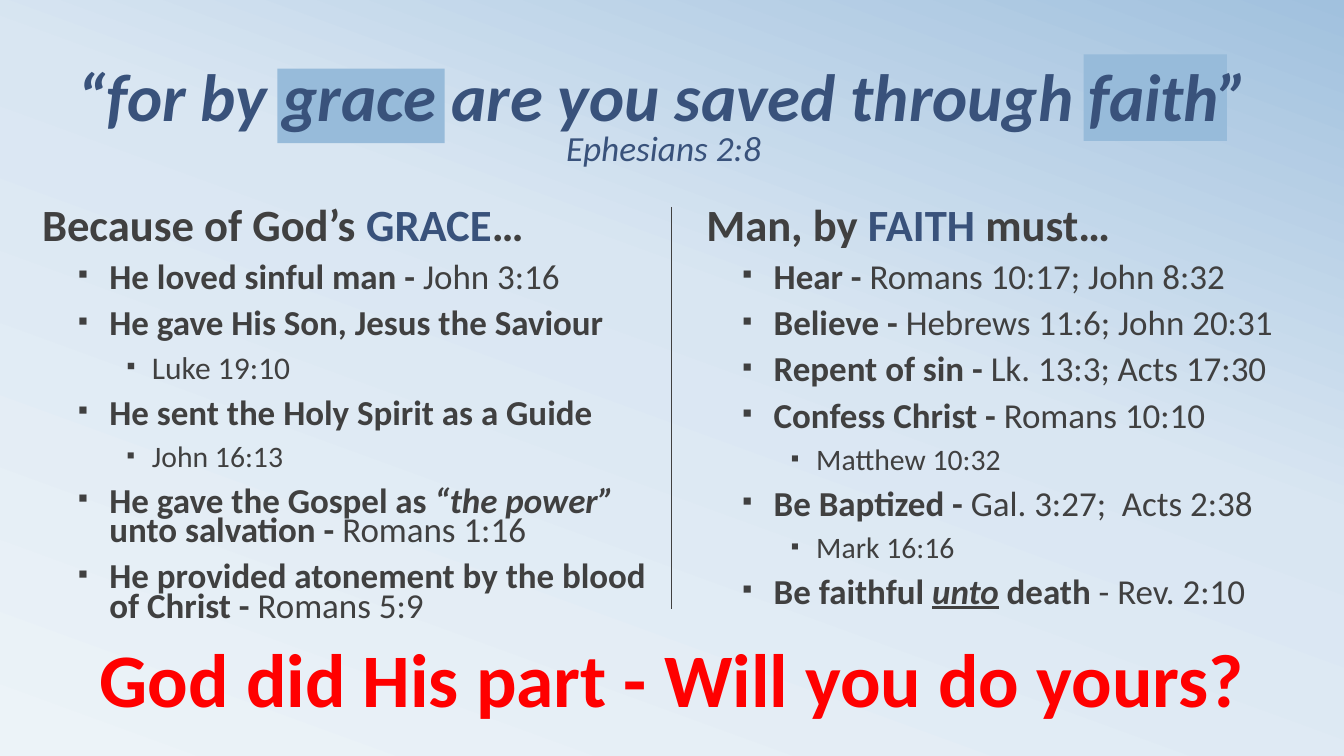
from copy import deepcopy

from lxml.etree import SubElement
from pptx import Presentation
from pptx.dml.color import RGBColor
from pptx.enum.shapes import MSO_CONNECTOR as Connector, MSO_SHAPE as Shape
from pptx.enum.text import MSO_ANCHOR as Anchor, MSO_AUTO_SIZE as AutoSize, PP_ALIGN as Align
from pptx.oxml.ns import qn
from pptx.util import Cm, Pt

NAVY, GRAY, RED, SKY = "39527B", "404040", "FF0000", "97BBDA"
BACKGROUND = [(0, "ECF3F8"), (0.58, "D9E6F2"), (1, "A1C1DE")]
INDENTS = {1: (1.7, -0.79), 2: (2.77, -0.64)}  # left margin and first line, cm

# Each point: level, text size, spans of (text, style letters)
GRACE_HEADING = [("Because of God’s ", GRAY), ("GRACE", NAVY), ("…", GRAY)]
GRACE_POINTS = [
    (1, 25, [("He loved sinful man - ", "b"), ("John 3:16", "")]),
    (1, 25, [("He gave His Son, Jesus the Saviour", "b")]),
    (2, 22.5, [("Luke 19:10", "")]),
    (1, 25, [("He sent the Holy Spirit as a Guide", "b")]),
    (2, 21.2, [("John 16:13", "")]),
    (1, 25, [("He gave the Gospel as ", "b"), ("“the power” ", "bi"),
             ("unto salvation - ", "b"), ("Romans 1:16", "")]),
    (1, 25, [("He provided atonement by the blood of Christ - ", "b"), ("Romans 5:9", "")]),
]
FAITH_HEADING = [("Man, by ", GRAY), ("FAITH", NAVY), (" must…", GRAY)]
FAITH_POINTS = [
    (1, 25, [("Hear - ", "b"), ("Romans 10:17; John 8:32", "")]),
    (1, 25, [("Believe - ", "b"), ("Hebrews 11:6; John 20:31", "")]),
    (1, 25, [("Repent of sin - ", "b"), ("Lk. 13:3; Acts 17:30", "")]),
    (1, 25, [("Confess Christ - ", "b"), ("Romans 10:10", "")]),
    (2, 21.2, [("Matthew 10:32", "")]),
    (1, 25, [("Be Baptized - ", "b"), ("Gal. 3:27;  Acts 2:38", "")]),
    (2, 21.2, [("Mark 16:16", "")]),
    (1, 25, [("Be faithful ", "b"), ("unto", "biu"), (" death", "b"), (" - Rev. 2:10", "")]),
]


def color(hex_string):
    return RGBColor.from_string(hex_string)


def write(para, text, size, ink=GRAY, style=""):
    """Add one span; style letters are b(old), i(talic), u(nderline)."""
    span = para.add_run()
    span.text = text
    font = span.font
    font.name, font.size = "Calibri", Pt(size)
    font.bold, font.italic, font.underline = ("b" in style, "i" in style, "u" in style)
    font.color.rgb = color(ink)


def add_text_frame(page, left, top, width, height):
    box = page.shapes.add_textbox(Cm(left), Cm(top), Cm(width), Cm(height))
    box.text_frame.word_wrap = True
    return box.text_frame


def add_bullet(para, level):
    margin, first_line = INDENTS[level]
    props = para._p.get_or_add_pPr()
    props.set("marL", str(Cm(margin)))
    props.set("indent", str(Cm(first_line)))
    SubElement(SubElement(props, qn("a:buClr")), qn("a:srgbClr"), val=GRAY)
    SubElement(props, qn("a:buSzPct"), val="80000")
    SubElement(props, qn("a:buFont"), typeface="Calibri")
    SubElement(props, qn("a:buChar"), char="▪")


def paint_background(page):
    fill = page.background.fill
    fill.gradient()
    fill.gradient_angle = 70
    stops = page._element.find(".//" + qn("a:gsLst"))
    stops.append(deepcopy(stops[0]))
    for stop, (position, shade) in zip(fill.gradient_stops, BACKGROUND):
        stop.position = position
        stop.color.rgb = color(shade)


def add_highlight(page, left, top, width, height):
    patch = page.shapes.add_shape(Shape.RECTANGLE, Cm(left), Cm(top), Cm(width), Cm(height))
    patch.shadow.inherit = False
    patch.fill.solid()
    patch.fill.fore_color.rgb = color(SKY)
    patch.line.fill.background()


def add_title(page, left, top, width, height):
    title = page.shapes.title
    title.left, title.top, title.width, title.height = map(Cm, (left, top, width, height))
    frame = title.text_frame
    frame.auto_size, frame.vertical_anchor = AutoSize.NONE, Anchor.BOTTOM
    para = frame.paragraphs[0]
    para.alignment, para.line_spacing = Align.CENTER, 0.8
    write(para, "“for by grace are you saved through faith”", 47.7, NAVY, "bi")
    para.add_line_break()
    write(para, "Ephesians 2:8", 25.2, NAVY, "i")
    page.shapes._spTree.append(title._element)  # in front of the highlights


def add_column(page, left, top, width, height, heading, points):
    frame = add_text_frame(page, left, top, width, height)
    para = frame.paragraphs[0]
    para.line_spacing, para.space_before = 0.7, Pt(18)
    for text, ink in heading:
        write(para, text, 31.9, ink, "b")
    for index, (level, size, spans) in enumerate(points):
        para = frame.add_paragraph()
        para.level, para.line_spacing = level, 0.7
        para.space_before, para.space_after = Pt(6 if index else 12), Pt(6)
        add_bullet(para, level)
        for text, style in spans:
            write(para, text, size, style=style)


def add_divider(page, x, top, bottom):
    line = page.shapes.add_connector(Connector.STRAIGHT, Cm(x), Cm(top), Cm(x), Cm(bottom))
    line.line.color.rgb = color(GRAY)
    line.line.width = Pt(0.75)
    SubElement(line._element.spPr, qn("a:effectLst"))


def add_appeal(page, left, top, width, height):
    para = add_text_frame(page, left, top, width, height).paragraphs[0]
    para.alignment = Align.CENTER
    write(para, "God did His part - Will you do yours?", 54, RED, "b")


def main():
    deck = Presentation()
    deck.slide_width, deck.slide_height = Cm(33.87), Cm(19.05)
    page = deck.slides.add_slide(deck.slide_layouts.get_by_name("Title Only"))
    paint_background(page)

    # Two columns with a divider
    add_column(page, 0.81, 5.21, 15.9, 11.3, GRACE_HEADING, GRACE_POINTS)
    add_column(page, 17.55, 5.21, 15.9, 12.57, FAITH_HEADING, FAITH_POINTS)
    add_appeal(page, 0.84, 15.8, 32.21, 2.57)
    add_divider(page, 16.92, 5.21, 15.34)

    # Verse with its two highlighted words
    add_highlight(page, 6.99, 1.73, 4.22, 1.88)
    add_highlight(page, 27.31, 1.37, 3.61, 2.18)
    add_title(page, 0, 0, 33.45, 4.37)

    deck.save("out.pptx")


if __name__ == "__main__":
    main()
